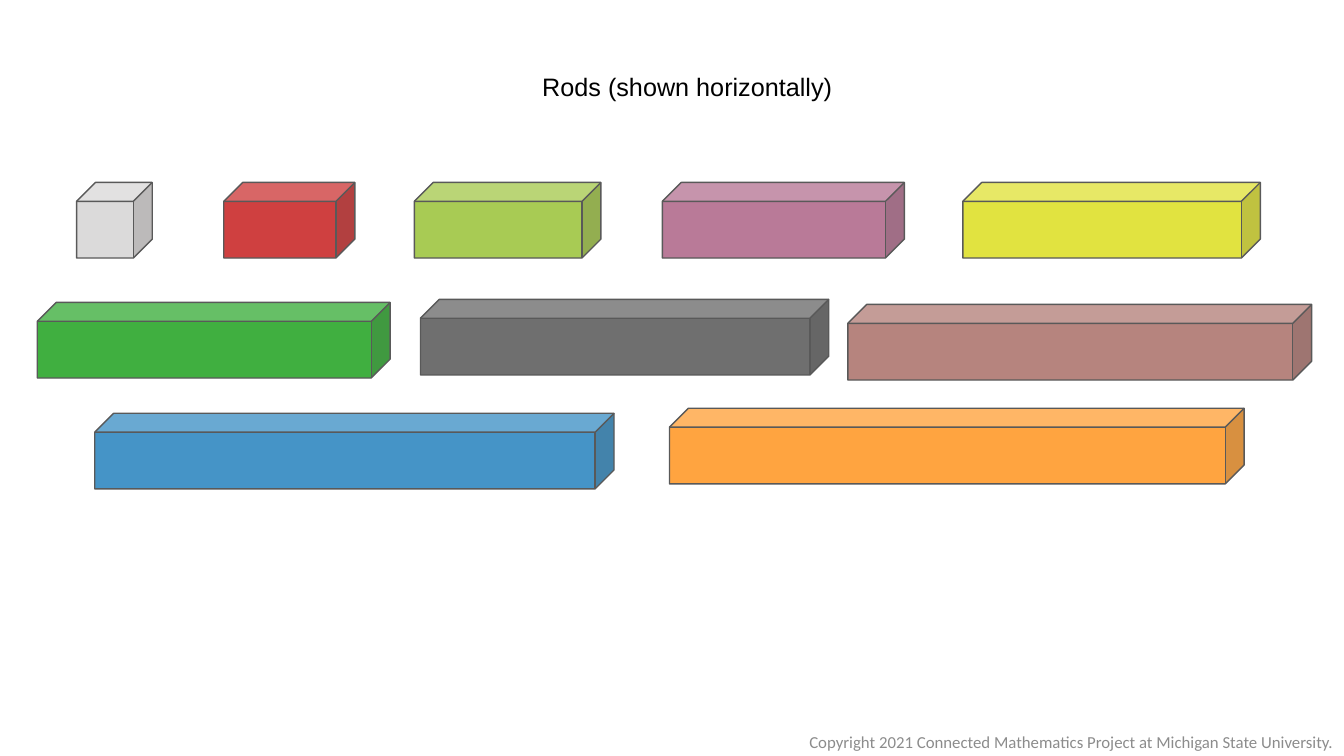
import pptx
import pptx.util
import pptx.dml.color
import pptx.enum.shapes
import pptx.enum.text
import pptx.oxml
import pptx.oxml.ns

RGBColor = pptx.dml.color.RGBColor
PX = 9144  # EMU per px, 100 px to the inch

OUTLINE = RGBColor(0x59, 0x59, 0x59)
BLACK = RGBColor(0x00, 0x00, 0x00)
GREY_TEXT = RGBColor(0x8C, 0x8C, 0x8C)
WHITE_ROD = RGBColor(0xD0, 0xCE, 0xCE)
RED = RGBColor(0xC0, 0x00, 0x00)
LIGHT_GREEN = RGBColor(0x8C, 0xBA, 0x1C)
PURPLE = RGBColor(0xA2, 0x4E, 0x76)
YELLOW = RGBColor(0xD7, 0xDA, 0x00)
DARK_GREEN = RGBColor(0x00, 0x95, 0x00)
BLACK_ROD = RGBColor(0x40, 0x40, 0x40)
BROWN = RGBColor(0x9E, 0x5B, 0x53)
BLUE = RGBColor(0x07, 0x71, 0xB5)
ORANGE = RGBColor(0xFF, 0x86, 0x00)

ROD_HEIGHT = 75
UNIT = 55   # front length of one unit
DEPTH = 20  # sideways extent of the end face
OPACITY = 75

# Left, top and colour of each rod, from one unit long to ten
RODS = [
    (76, 181, WHITE_ROD),
    (222, 181, RED),
    (411, 181, LIGHT_GREEN),
    (657, 181, PURPLE),
    (955, 181, YELLOW),
    (37, 300, DARK_GREEN),
    (417, 297, BLACK_ROD),
    (841, 302, BROWN),
    (94, 410, BLUE),
    (664, 405, ORANGE),
]


def px(*lengths):
    return [pptx.util.Emu(length * PX) for length in lengths]


def add_rod(slide, left, top, units, color):
    shape = slide.shapes.add_shape(
        pptx.enum.shapes.MSO_SHAPE.CUBE,
        *px(left, top, DEPTH + UNIT * units, ROD_HEIGHT))
    shape.shadow.inherit = False
    shape.fill.solid()
    shape.fill.fore_color.rgb = color
    shape.line.color.rgb = OUTLINE
    shape.line.width = pptx.util.Pt(1)
    # Transparency of the fill
    fill_color = shape.fill._xPr.find(".//" + pptx.oxml.ns.qn("a:srgbClr"))
    alpha = pptx.oxml.parse_xml(
        f'<a:alpha {pptx.oxml.ns.nsdecls("a")} val="{OPACITY * 1000}"/>')
    fill_color.append(alpha)


def add_label(slide, box, text, font_name, size, color, alignment, anchor):
    frame = slide.shapes.add_textbox(*px(*box)).text_frame
    frame.word_wrap = True
    frame.vertical_anchor = anchor
    paragraph = frame.paragraphs[0]
    paragraph.alignment = alignment
    run = paragraph.add_run()
    run.text = text
    run.font.name = font_name
    run.font.size = pptx.util.Pt(size)
    run.font.color.rgb = color


def main():
    presentation = pptx.Presentation()
    presentation.slide_width, presentation.slide_height = px(1333, 750)
    slide = presentation.slides.add_slide(presentation.slide_layouts[6])
    align = pptx.enum.text.PP_ALIGN
    anchor = pptx.enum.text.MSO_ANCHOR

    # Rods
    for units, (left, top, color) in enumerate(RODS, start=1):
        add_rod(slide, left, top, units, color)

    # Copyright line and title
    add_label(slide, (789, 716, 551, 40),
              "Copyright 2021 Connected Mathematics Project at Michigan State University. ",
              "Calibri", 12, GREY_TEXT, align.CENTER, anchor.MIDDLE)
    add_label(slide, (528, 66, 313, 40), "Rods (shown horizontally)",
              "Arial", 18, BLACK, align.LEFT, anchor.TOP)

    presentation.save("out.pptx")


if __name__ == "__main__":
    main()
